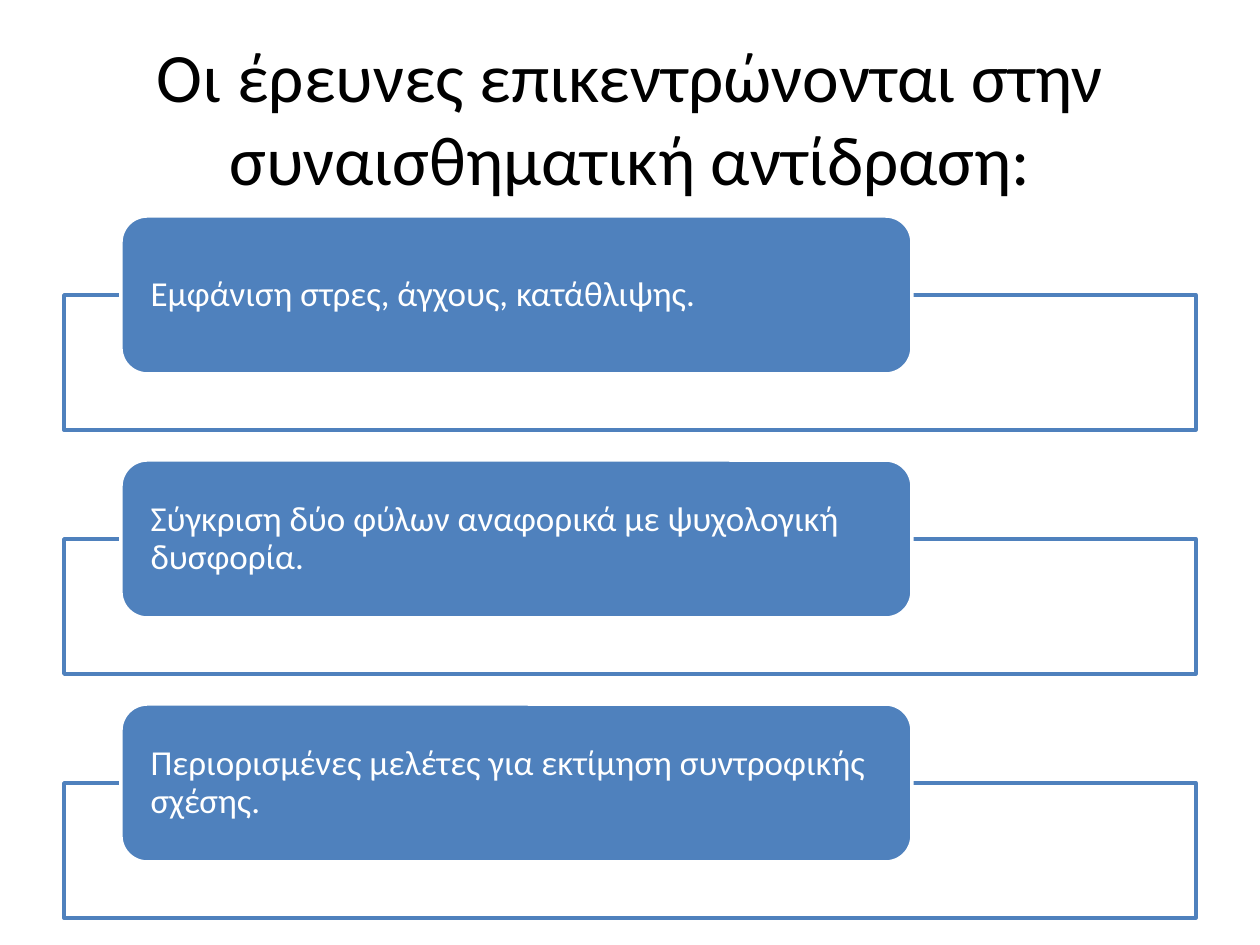
import pptx
import pptx.util
import pptx.dml.color
import pptx.enum.shapes
import pptx.enum.text
import pptx.oxml.ns
import lxml.etree

TITLE = "Οι έρευνες επικεντρώνονται στην συναισθηματική αντίδραση:"
FINDINGS = [
    "Εμφάνιση στρες, άγχους, κατάθλιψης.",
    "Σύγκριση δύο φύλων αναφορικά με ψυχολογική δυσφορία.",
    "Περιορισμένες μελέτες για εκτίμηση συντροφικής σχέσης.",
]

BLACK = pptx.dml.color.RGBColor(0x00, 0x00, 0x00)
WHITE = pptx.dml.color.RGBColor(0xFF, 0xFF, 0xFF)
BLUE = pptx.dml.color.RGBColor(0x4F, 0x81, 0xBD)
FONT = "Calibri"

# Layout in px, 126 to the inch
TITLE_BOX = (63, 38, 1134, 157)
FRAME_LEFT, FRAME_TOP, FRAME_WIDTH, FRAME_HEIGHT = 64, 295, 1132, 135
LABEL_LEFT, LABEL_TOP, LABEL_WIDTH, LABEL_HEIGHT = 121, 216, 791, 158
LABEL_INSET = 22
ROW_PITCH = 244


def px(length):
    return pptx.util.Emu(round(length * 914400 / 126))


def add_box(slide, preset, box, fill, line):
    shape = slide.shapes.add_shape(preset, *map(px, box))
    shape.shadow.inherit = False
    shape.fill.solid()
    shape.fill.fore_color.rgb = fill
    shape.line.color.rgb = line
    shape.line.width = pptx.util.Pt(2)
    return shape


def set_text(shape, text, size, color, align, inset_x, inset_y):
    frame = shape.text_frame
    frame.text = text
    frame.word_wrap = True
    frame.vertical_anchor = pptx.enum.text.MSO_ANCHOR.MIDDLE
    frame.margin_left = frame.margin_right = px(inset_x)
    frame.margin_top = frame.margin_bottom = px(inset_y)
    paragraph = frame.paragraphs[0]
    paragraph.alignment = align
    font = paragraph.runs[0].font
    font.name, font.size, font.color.rgb = FONT, pptx.util.Pt(size), color
    return paragraph


def set_opacity(shape, percent):
    qn = pptx.oxml.ns.qn
    color = shape.fill._xPr.find(qn("a:solidFill")).find(qn("a:srgbClr"))
    lxml.etree.SubElement(color, qn("a:alpha")).set("val", str(percent * 1000))


def main():
    presentation = pptx.Presentation()
    presentation.slide_width, presentation.slide_height = px(1260), px(945)
    slide = presentation.slides.add_slide(presentation.slide_layouts[6])
    align = pptx.enum.text.PP_ALIGN
    presets = pptx.enum.shapes.MSO_SHAPE

    # Title
    title = slide.shapes.add_textbox(*map(px, TITLE_BOX))
    set_text(title, TITLE, 39.6, BLACK, align.CENTER, 13, 6)

    # Findings: an outlined frame with a rounded label over its top edge
    for row, finding in enumerate(FINDINGS):
        offset = row * ROW_PITCH
        frame = add_box(slide, presets.RECTANGLE,
                        (FRAME_LEFT, FRAME_TOP + offset, FRAME_WIDTH, FRAME_HEIGHT),
                        WHITE, BLUE)
        set_opacity(frame, 90)
        label = add_box(slide, presets.ROUNDED_RECTANGLE,
                        (LABEL_LEFT, LABEL_TOP + offset, LABEL_WIDTH, LABEL_HEIGHT),
                        BLUE, WHITE)
        paragraph = set_text(label, finding, 20, WHITE, align.LEFT, LABEL_INSET, 0)
        paragraph.line_spacing = 0.9

    presentation.save("out.pptx")


if __name__ == "__main__":
    main()
